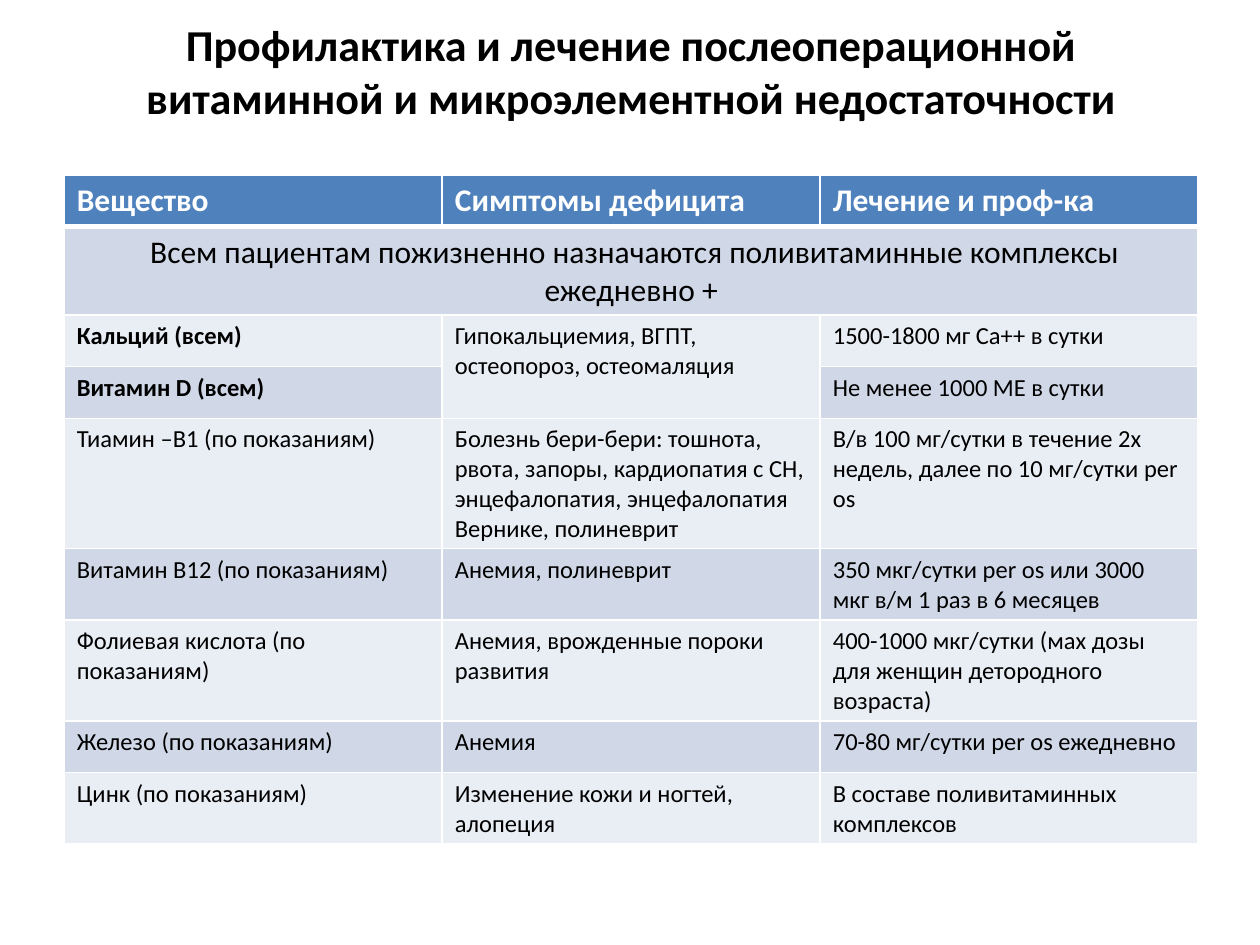
from dataclasses import dataclass

from lxml.etree import SubElement
from pptx import Presentation
from pptx.dml.color import RGBColor
from pptx.enum.text import MSO_ANCHOR, PP_ALIGN
from pptx.oxml.ns import qn
from pptx.util import Inches, Pt


@dataclass(frozen=True)
class Theme:
    font: str = "Calibri"
    text: str = "000000"
    header_text: str = "FFFFFF"
    header_fill: str = "4F81BD"
    band_fills: tuple = ("E9EDF4", "D0D8E8")
    border: str = "FFFFFF"
    title_size: float = 25.2
    heading_size: float = 18
    body_size: float = 14
    border_width: float = 1
    header_rule_width: float = 3


THEME = Theme()
SLIDE_WIDTH, SLIDE_HEIGHT = Inches(10), Inches(7.5)
LEFT, CONTENT_WIDTH = Inches(0.51), Inches(9)
ROW_HEIGHT = Inches(0.41)

TITLE = "Профилактика и лечение послеоперационной витаминной и микроэлементной недостаточности"
HEADERS = ("Вещество", "Симптомы дефицита", "Лечение и проф-ка")
BANNER = " Всем пациентам пожизненно назначаются поливитаминные комплексы ежедневно +"
SUBSTANCES = (
    ("Кальций (всем)", "Гипокальциемия, ВГПТ, остеопороз, остеомаляция",
     "1500-1800 мг Са++ в сутки"),
    ("Витамин D (всем)", "", "Не менее 1000 МЕ в сутки"),
    ("Тиамин –В1 (по показаниям)",
     "Болезнь бери-бери: тошнота, рвота, запоры, кардиопатия с СН, "
     "энцефалопатия, энцефалопатия Вернике, полиневрит",
     "В/в 100 мг/сутки в течение 2х недель, далее по 10 мг/сутки per os"),
    ("Витамин В12 (по показаниям)", "Анемия, полиневрит",
     "350 мкг/сутки per os или 3000 мкг в/м 1 раз в 6 месяцев"),
    ("Фолиевая кислота (по показаниям)", "Анемия, врожденные пороки развития",
     "400-1000 мкг/сутки (мах дозы для женщин детородного возраста)"),
    ("Железо (по показаниям)", "Анемия", "70-80 мг/сутки per os ежедневно"),
    ("Цинк (по показаниям)", "Изменение кожи и ногтей, алопеция",
     "В составе поливитаминных комплексов"),
)


def write_text(text_frame, text, size, color, bold=False, alignment=PP_ALIGN.LEFT):
    text_frame.word_wrap = True
    text_frame.text = text
    paragraph = text_frame.paragraphs[0]
    paragraph.alignment = alignment
    for run in paragraph.runs:
        run.font.name = THEME.font
        run.font.size = Pt(size)
        run.font.bold = bold
        run.font.color.rgb = RGBColor.from_string(color)


def style_cell(cell, fill, bottom_width=THEME.border_width):
    # Borders come before the fill in the cell properties
    properties = cell._tc.get_or_add_tcPr()
    for side in ("L", "R", "T", "B"):
        width = bottom_width if side == "B" else THEME.border_width
        line = SubElement(properties, qn(f"a:ln{side}"), w=str(Pt(width)))
        SubElement(SubElement(line, qn("a:solidFill")), qn("a:srgbClr"), val=THEME.border)
    cell.fill.solid()
    cell.fill.fore_color.rgb = RGBColor.from_string(fill)


def add_title(slide, left, top, width, height):
    text_frame = slide.shapes.add_textbox(left, top, width, height).text_frame
    text_frame.vertical_anchor = MSO_ANCHOR.MIDDLE
    write_text(text_frame, TITLE, THEME.title_size, THEME.text, True, PP_ALIGN.CENTER)


def add_substance_table(slide, left, top, width, row_height):
    rows = (HEADERS, (BANNER, "", ""), *SUBSTANCES)
    table = slide.shapes.add_table(
        len(rows), len(HEADERS), left, top, width, row_height * len(rows)).table

    # Fills, borders and text
    for row_index, values in enumerate(rows):
        is_header, is_banner = row_index == 0, row_index == 1
        for column_index, value in enumerate(values):
            cell = table.cell(row_index, column_index)
            if is_header:
                style_cell(cell, THEME.header_fill, THEME.header_rule_width)
            else:
                style_cell(cell, THEME.band_fills[row_index % 2])
            for_everyone = column_index == 0 and value.endswith("(всем)")
            write_text(
                cell.text_frame, value,
                THEME.heading_size if is_header or is_banner else THEME.body_size,
                THEME.header_text if is_header else THEME.text,
                is_header or for_everyone,
                PP_ALIGN.CENTER if is_banner else PP_ALIGN.LEFT)

    # Full-width banner, and symptoms shared by calcium and vitamin D
    table.cell(1, 0).merge(table.cell(1, 2))
    table.cell(2, 1).merge(table.cell(3, 1))


def main():
    presentation = Presentation()
    presentation.slide_width, presentation.slide_height = SLIDE_WIDTH, SLIDE_HEIGHT
    slide = presentation.slides.add_slide(presentation.slide_layouts[6])
    add_title(slide, LEFT, Inches(0.13), CONTENT_WIDTH, Inches(0.85))
    add_substance_table(slide, LEFT, Inches(1.39), CONTENT_WIDTH, ROW_HEIGHT)
    presentation.save("out.pptx")


if __name__ == "__main__":
    main()
